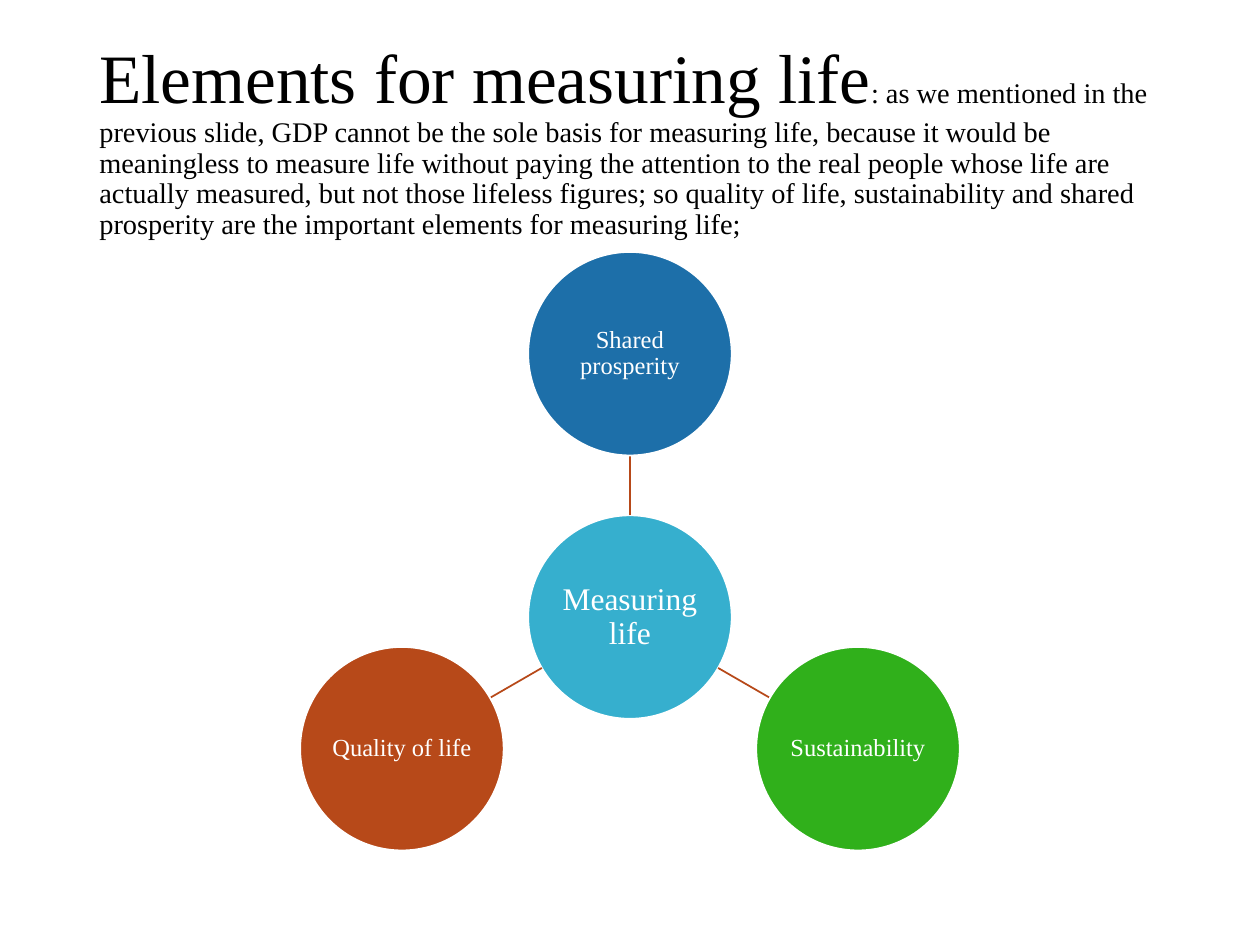
from math import cos, radians, sin

from lxml.etree import SubElement
from pptx import Presentation
from pptx.dml.color import RGBColor
from pptx.enum.shapes import MSO_CONNECTOR as Connector, MSO_SHAPE as Shape
from pptx.enum.text import MSO_ANCHOR as Anchor, PP_ALIGN as Align
from pptx.oxml.ns import qn
from pptx.util import Inches, Pt

WIDTH, HEIGHT = Inches(10), Inches(7.5)
FONT = "Times New Roman"
WHITE, BLACK, RUST = "FFFFFF", "000000", "B74919"
HEADING = "Elements for measuring life"
EXPLANATION = (
    ": as we mentioned in the previous slide, GDP cannot be the sole basis for "
    "measuring life, because it would be meaningless to measure life without paying "
    "the attention to the real people whose life are actually measured, but not those "
    "lifeless figures; so quality of life, sustainability and shared prosperity are "
    "the important elements for measuring life;"
)
ELEMENTS = [
    ("Shared prosperity", "1D6FA9"),
    ("Sustainability", "30B01B"),
    ("Quality of life", RUST),
]


def color(value):
    return RGBColor.from_string(value)


def add_text(paragraph, text, size=14, fill=WHITE, align=Align.CENTER):
    paragraph.alignment = align
    paragraph.line_spacing = 0.9
    run = paragraph.add_run()
    run.text = text
    run.font.name = FONT
    run.font.size = Pt(size)
    run.font.color.rgb = color(fill)


def add_title(slide, left, top, width, height):
    frame = slide.shapes.add_textbox(left, top, width, height).text_frame
    frame.word_wrap = True
    frame.vertical_anchor = Anchor.MIDDLE
    for text, size in ((HEADING, 39.6), (EXPLANATION, 16.2)):
        add_text(frame.paragraphs[0], text, size=size, fill=BLACK, align=Align.LEFT)


def add_circle(slide, center, diameter, text, fill, size=14):
    left, top = (round(position - diameter / 2) for position in center)
    circle = slide.shapes.add_shape(Shape.OVAL, left, top, diameter, diameter)
    circle.shadow.inherit = False
    circle.fill.solid()
    circle.fill.fore_color.rgb = color(fill)
    circle.line.color.rgb = color(WHITE)
    circle.line.width = Pt(1)
    frame = circle.text_frame
    frame.word_wrap = True
    frame.vertical_anchor = Anchor.MIDDLE
    frame.margin_left = frame.margin_right = Inches(0.01)
    frame.margin_top = frame.margin_bottom = Inches(0.01)
    add_text(frame.paragraphs[0], text, size=size)


def add_spoke(slide, start, end):
    spoke = slide.shapes.add_connector(Connector.STRAIGHT, *start, *end)
    spoke.line.color.rgb = color(RUST)
    spoke.line.width = Pt(1)
    SubElement(spoke.element.spPr, qn("a:effectLst"))


def add_radial_diagram(slide, left, top, width, height):
    diameter = round(height * 0.34)
    orbit = (height - diameter) / (1 + sin(radians(30)))
    hub = (round(left + width / 2), round(top + diameter / 2 + orbit))

    def on_ray(angle, distance):
        turn = radians(angle)
        return (round(hub[0] + distance * cos(turn)),
                round(hub[1] + distance * sin(turn)))

    add_circle(slide, hub, diameter, "Measuring life", "36AFCE", size=18)
    for index, (text, fill) in enumerate(ELEMENTS):
        angle = -90 + index * 360 / len(ELEMENTS)
        add_spoke(slide, on_ray(angle, diameter / 2),
                  on_ray(angle, orbit - diameter / 2))
        add_circle(slide, on_ray(angle, orbit), diameter, text, fill)


def main():
    presentation = Presentation()
    presentation.slide_width, presentation.slide_height = WIDTH, HEIGHT
    slide = presentation.slides.add_slide(presentation.slide_layouts[6])
    add_title(slide, Inches(0.69), Inches(0.4), Inches(8.62), Inches(1.45))
    add_radial_diagram(slide, Inches(2.38), Inches(2), Inches(5.24), Inches(4.75))
    presentation.save("out.pptx")


if __name__ == "__main__":
    main()
